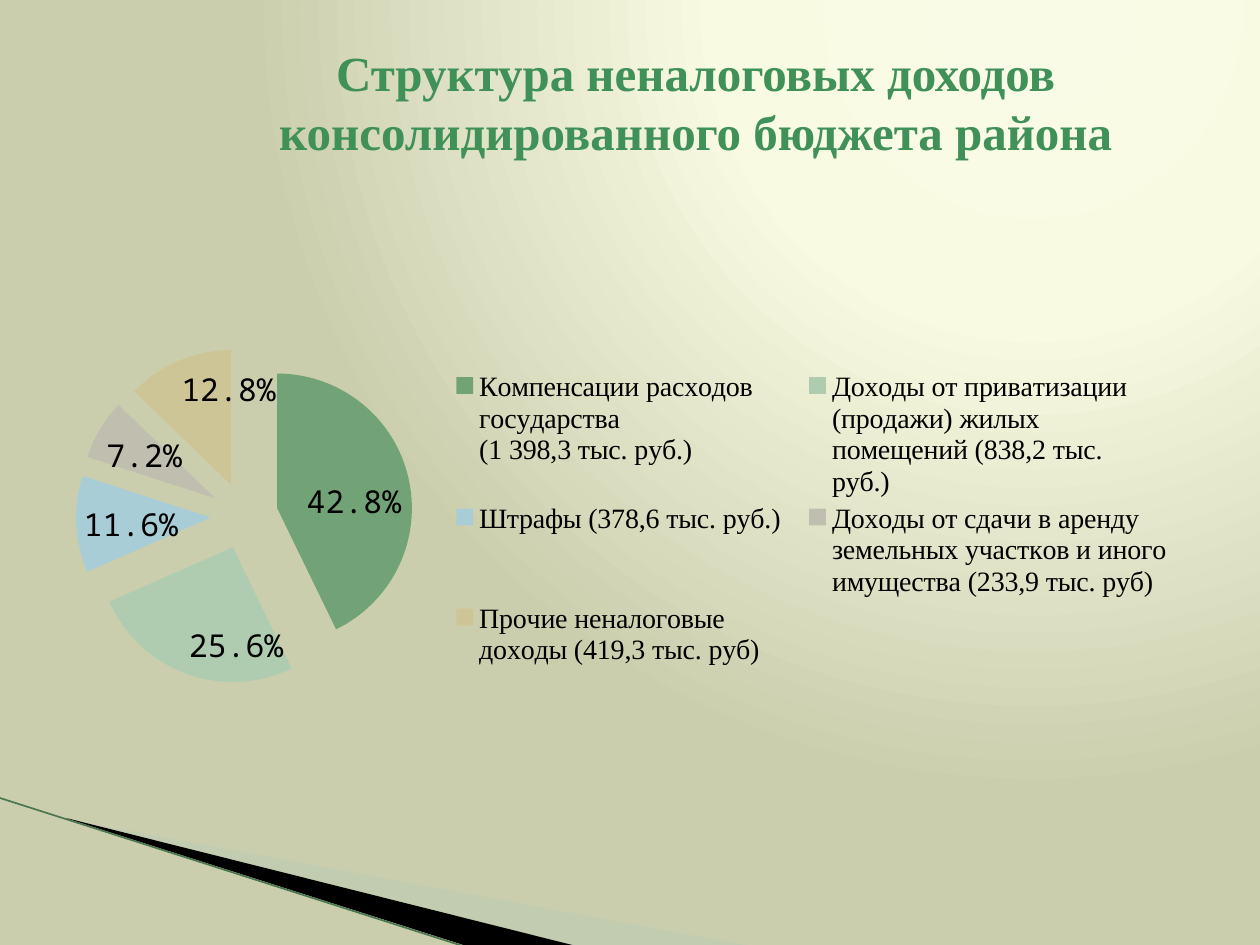
"""Build the slide on the structure of the district's non-tax revenue."""
from dataclasses import dataclass

from lxml import etree
from pptx import Presentation
from pptx.chart.chart import Chart
from pptx.chart.data import CategoryChartData
from pptx.dml.color import RGBColor
from pptx.enum.chart import XL_CHART_TYPE, XL_LABEL_POSITION, XL_LEGEND_POSITION
from pptx.enum.shapes import MSO_CONNECTOR
from pptx.enum.text import MSO_ANCHOR, PP_ALIGN
from pptx.oxml import parse_xml
from pptx.oxml.ns import qn
from pptx.slide import Slide
from pptx.util import Pt

PIE = XL_CHART_TYPE.PIE
INSIDE_END = XL_LABEL_POSITION.INSIDE_END
LEGEND_RIGHT = XL_LEGEND_POSITION.RIGHT
STRAIGHT = MSO_CONNECTOR.STRAIGHT
MIDDLE = MSO_ANCHOR.MIDDLE
CENTER = PP_ALIGN.CENTER

DRAWING_NS = "http://schemas.openxmlformats.org/drawingml/2006/main"
SHARE_FORMAT = "0.0%"
EXPLOSION = 25


@dataclass(frozen=True)
class Theme:
    """Colours, fonts and type sizes of the slide."""

    title_color: str = "3F9158"
    text_color: str = "000000"
    ray_line: str = "4A7650"
    backdrop: tuple[tuple[int, str], ...] = ((0, "F9FBE7"), (40, "F8FAE2"), (100, "CBCEAD"))
    title_font: str = "Times New Roman"
    label_font: str = "Noto Sans Mono"
    title_size: float = 28
    label_size: float = 18
    legend_size: float = 16


@dataclass(frozen=True)
class Revenue:
    """One source of revenue with its share of the total."""

    label: str
    share: float
    color: str


@dataclass(frozen=True)
class Ray:
    """A pointed wedge in the lower left corner, with corners in points."""

    corners: tuple[tuple[float, float], ...]
    color: str
    opacity: int


@dataclass(frozen=True)
class Area:
    """A part of the chart, as fractions of its width and height."""

    x: float
    y: float
    w: float
    h: float


THEME = Theme()
REVENUES = (
    Revenue("Компенсации расходов\nгосударства\n(1 398,3 тыс. руб.)", 0.428, "72A376"),
    Revenue(
        "Доходы от приватизации\n(продажи) жилых\nпомещений (838,2 тыс.\nруб.)", 0.256, "B0CCB0"
    ),
    Revenue("Штрафы (378,6 тыс. руб.)", 0.116, "A8CDD7"),
    Revenue(
        "Доходы от сдачи в аренду\nземельных участков и иного\nимущества (233,9 тыс. руб)",
        0.072,
        "C0BEAF",
    ),
    Revenue("Прочие неналоговые\nдоходы (419,3 тыс. руб)", 0.128, "CEC597"),
)
RAYS = (
    Ray(((39.6, 468.5), (428.4, 540.5), (328.5, 540.5), (39.6, 468)), "B3CBB5", 40),
    Ray(((38, 467.5), (329, 540.5), (268, 541), (39, 468)), "000000", 100),
)
PIE_AREA = Area(0.01, 0.23, 0.3, 0.54)
LEGEND_AREA = Area(0.33, 0.26, 0.66, 0.49)


def rgb(color: str) -> RGBColor:
    """Turn a hex string into a colour."""
    return RGBColor.from_string(color)


def paint_background(slide: Slide) -> None:
    """Fill the background with a glow from the upper right."""
    fill = slide.background.fill
    fill.solid()
    stops = "".join(
        f'<a:gs pos="{position * 1000}"><a:srgbClr val="{color}"/></a:gs>'
        for position, color in THEME.backdrop
    )
    glow = parse_xml(
        f'<a:gradFill xmlns:a="{DRAWING_NS}" rotWithShape="1"><a:gsLst>{stops}</a:gsLst>'
        '<a:path path="circle"><a:fillToRect l="65000" t="0" r="0" b="98000"/></a:path>'
        "</a:gradFill>"
    )
    solid = next(slide.element.iter(qn("a:solidFill")))
    solid.getparent().replace(solid, glow)


def draw_ray(slide: Slide, ray: Ray) -> None:
    """Draw one wedge."""
    start, *others = [(Pt(x), Pt(y)) for x, y in ray.corners]
    builder = slide.shapes.build_freeform(*start)
    builder.add_line_segments(others, close=True)
    wedge = builder.convert_to_shape()
    wedge.shadow.inherit = False
    wedge.line.fill.background()
    wedge.fill.solid()
    wedge.fill.fore_color.rgb = rgb(ray.color)
    if ray.opacity < 100:
        color = next(wedge.element.spPr.iter(qn("a:srgbClr")))
        etree.SubElement(color, qn("a:alpha"), val=str(ray.opacity * 1000))


def draw_ray_edge(slide: Slide) -> None:
    """Draw the thin line along the lower side of the rays."""
    edge = slide.shapes.add_connector(STRAIGHT, Pt(-0.7), Pt(455.8), Pt(267), Pt(541.4))
    edge.line.color.rgb = rgb(THEME.ray_line)
    edge.line.width = Pt(0.95)
    etree.SubElement(edge.element.spPr, qn("a:effectLst"))


def layout_xml(area: Area, inner: bool) -> etree.ElementBase:
    """Make a manual layout for a part of the chart."""
    layout = etree.Element(qn("c:layout"))
    manual = etree.SubElement(layout, qn("c:manualLayout"))
    settings = {"layoutTarget": "inner"} if inner else {}
    settings |= {"xMode": "edge", "yMode": "edge"}
    settings |= {"x": area.x, "y": area.y, "w": area.w, "h": area.h}
    for tag, value in settings.items():
        etree.SubElement(manual, qn(f"c:{tag}"), val=str(value))
    return layout


def place_chart_parts(chart: Chart) -> None:
    """Put the pie on the left and the legend beside it."""
    plot_area = next(chart.element.iter(qn("c:plotArea")))
    legend = next(chart.element.iter(qn("c:legend")))
    for part in (plot_area, legend):
        for automatic in part.findall(qn("c:layout")):
            part.remove(automatic)
    plot_area.insert(0, layout_xml(PIE_AREA, inner=True))
    legend.find(qn("c:legendPos")).addnext(layout_xml(LEGEND_AREA, inner=False))


def add_revenue_chart(slide: Slide) -> None:
    """Add the exploded pie of revenue shares."""
    shares = CategoryChartData(number_format=SHARE_FORMAT)
    shares.categories = [revenue.label for revenue in REVENUES]
    shares.add_series("Series 1", [revenue.share for revenue in REVENUES])
    chart = slide.shapes.add_chart(PIE, Pt(36), Pt(116.6), Pt(648), Pt(356.4), shares).chart
    chart.has_title = False
    chart.font.name = THEME.label_font
    chart.font.size = Pt(THEME.label_size)
    chart.font.color.rgb = rgb(THEME.text_color)

    chart.has_legend = True
    chart.legend.position = LEGEND_RIGHT
    chart.legend.include_in_layout = False
    chart.legend.font.name = THEME.title_font
    chart.legend.font.size = Pt(THEME.legend_size)
    chart.legend.font.color.rgb = rgb(THEME.text_color)

    plot = chart.plots[0]
    plot.vary_by_categories = True
    series = plot.series[0]
    explosion = etree.Element(qn("c:explosion"), val=str(EXPLOSION))
    next(chart.element.iter(qn("c:ser"))).find(qn("c:tx")).addnext(explosion)
    for index, revenue in enumerate(REVENUES):
        slice_fill = series.points[index].format.fill
        slice_fill.solid()
        slice_fill.fore_color.rgb = rgb(revenue.color)

    labels = series.data_labels
    labels.show_value = True
    labels.show_percentage = False
    labels.number_format = SHARE_FORMAT
    labels.number_format_is_linked = False
    labels.position = INSIDE_END
    place_chart_parts(chart)


def add_title(slide: Slide) -> None:
    """Add the centred heading."""
    frame = slide.shapes.add_textbox(Pt(111), Pt(21.6), Pt(573), Pt(72.7)).text_frame
    frame.word_wrap = True
    frame.vertical_anchor = MIDDLE
    frame.text = "Структура неналоговых доходов консолидированного бюджета района"
    heading = frame.paragraphs[0]
    heading.alignment = CENTER
    font = heading.runs[0].font
    font.name = THEME.title_font
    font.size = Pt(THEME.title_size)
    font.bold = True
    font.color.rgb = rgb(THEME.title_color)


def main() -> None:
    """Build and save the presentation."""
    deck = Presentation()
    deck.slide_width, deck.slide_height = Pt(720), Pt(540)
    slide = deck.slides.add_slide(deck.slide_layouts[6])
    paint_background(slide)
    for ray in RAYS:
        draw_ray(slide, ray)
    draw_ray_edge(slide)
    add_revenue_chart(slide)
    add_title(slide)
    deck.save("out.pptx")


if __name__ == "__main__":
    main()
